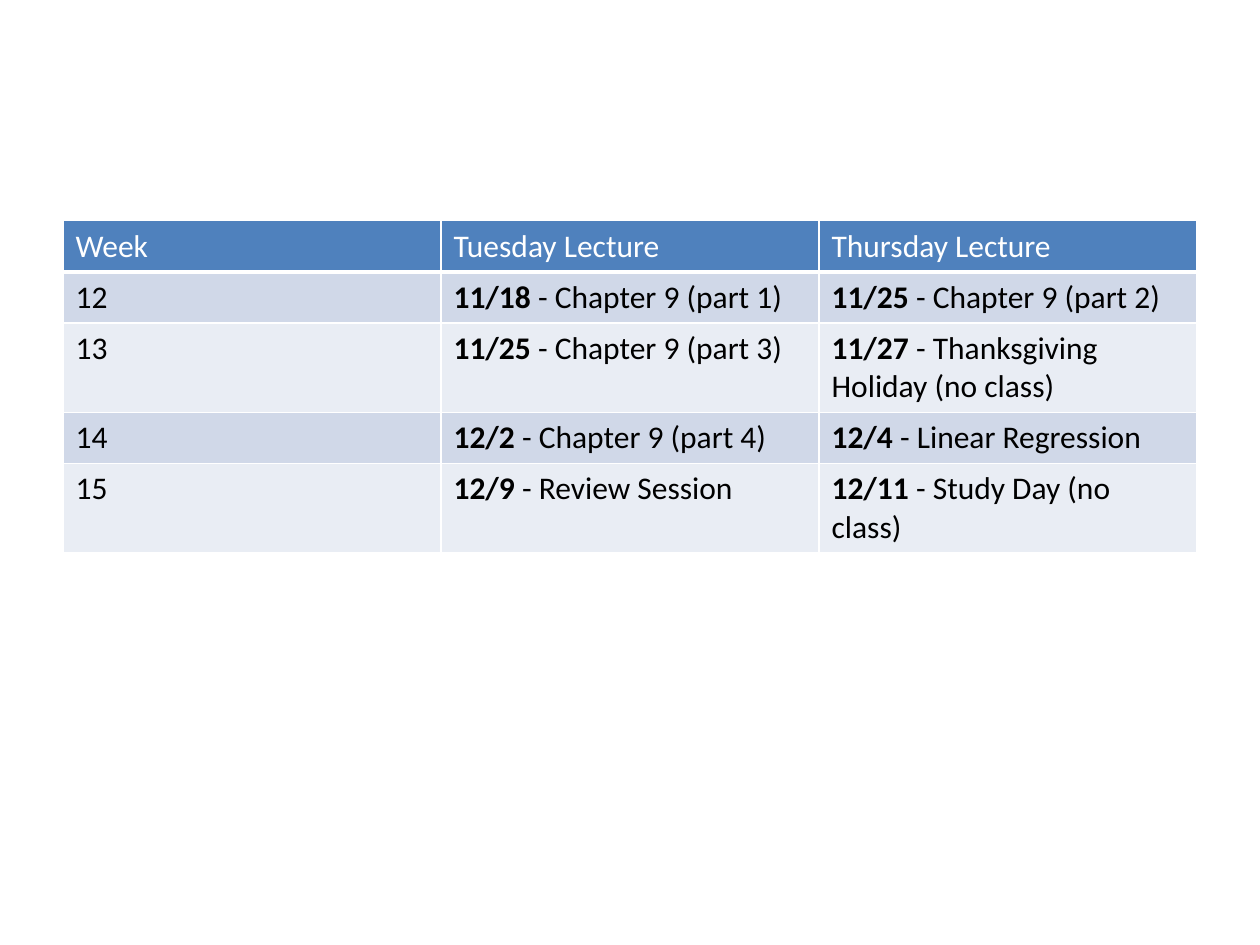
from lxml.etree import SubElement
from pptx import Presentation
from pptx.dml.color import RGBColor
from pptx.oxml.ns import qn
from pptx.util import Cm, Pt

# Content: week, then (date, topic) for each lecture
HEADINGS = ["Week", "Tuesday Lecture", "Thursday Lecture"]
WEEKS = [
    ("12", ("11/18", "Chapter 9 (part 1)"), ("11/25", "Chapter 9 (part 2)")),
    ("13", ("11/25", "Chapter 9 (part 3)"), ("11/27", "Thanksgiving Holiday (no class)")),
    ("14", ("12/2", "Chapter 9 (part 4)"), ("12/4", "Linear Regression")),
    ("15", ("12/9", "Review Session"), ("12/11", "Study Day (no class)")),
]

# Look
FONT, SIZE = "Calibri", 18
HEADER_FILL, BAND_FILLS = "4F81BD", ("D0D8E8", "E9EDF4")
WHITE, BLACK = "FFFFFF", "000000"
LEFT, TOP, COLUMN_WIDTH = 1.27, 4.45, 7.62
ROW_HEIGHTS = [1.03, 1.03, 1.8, 1.03, 1.8]


def paint(color_format, color):
    color_format.rgb = RGBColor.from_string(color)


def add_text(paragraph, text, *, color=BLACK, bold=False):
    run = paragraph.add_run()
    run.text = text
    run.font.name, run.font.size, run.font.bold = FONT, Pt(SIZE), bold
    paint(run.font.color, color)


def style_cell(cell, fill, bottom_width=1):
    # Borders come before the fill in the cell properties
    properties = cell._tc.get_or_add_tcPr()
    for side, width in (("L", 1), ("R", 1), ("T", 1), ("B", bottom_width)):
        border = SubElement(properties, qn(f"a:ln{side}"), w=str(Pt(width)))
        border_fill = SubElement(border, qn("a:solidFill"))
        SubElement(border_fill, qn("a:srgbClr"), val=WHITE)
    cell.fill.solid()
    paint(cell.fill.fore_color, fill)


def main():
    prs = Presentation()
    prs.slide_width, prs.slide_height = Cm(25.4), Cm(19.05)
    slide = prs.slides.add_slide(prs.slide_layouts[6])

    # Schedule grid
    schedule = slide.shapes.add_table(
        len(WEEKS) + 1, len(HEADINGS), Cm(LEFT), Cm(TOP),
        Cm(COLUMN_WIDTH * len(HEADINGS)), Cm(sum(ROW_HEIGHTS))).table
    for column in schedule.columns:
        column.width = Cm(COLUMN_WIDTH)
    for row, height in zip(schedule.rows, ROW_HEIGHTS):
        row.height = Cm(height)

    # Header row
    for cell, heading in zip(schedule.rows[0].cells, HEADINGS):
        style_cell(cell, HEADER_FILL, bottom_width=3)
        add_text(cell.text_frame.paragraphs[0], heading, color=WHITE)

    # Week rows
    for index, (week, *lectures) in enumerate(WEEKS):
        cells = list(schedule.rows[index + 1].cells)
        for cell in cells:
            style_cell(cell, BAND_FILLS[index % 2])
        add_text(cells[0].text_frame.paragraphs[0], week)
        for cell, (date, topic) in zip(cells[1:], lectures):
            paragraph = cell.text_frame.paragraphs[0]
            add_text(paragraph, date, bold=True)
            add_text(paragraph, f" - {topic}")

    prs.save("out.pptx")


if __name__ == "__main__":
    main()
